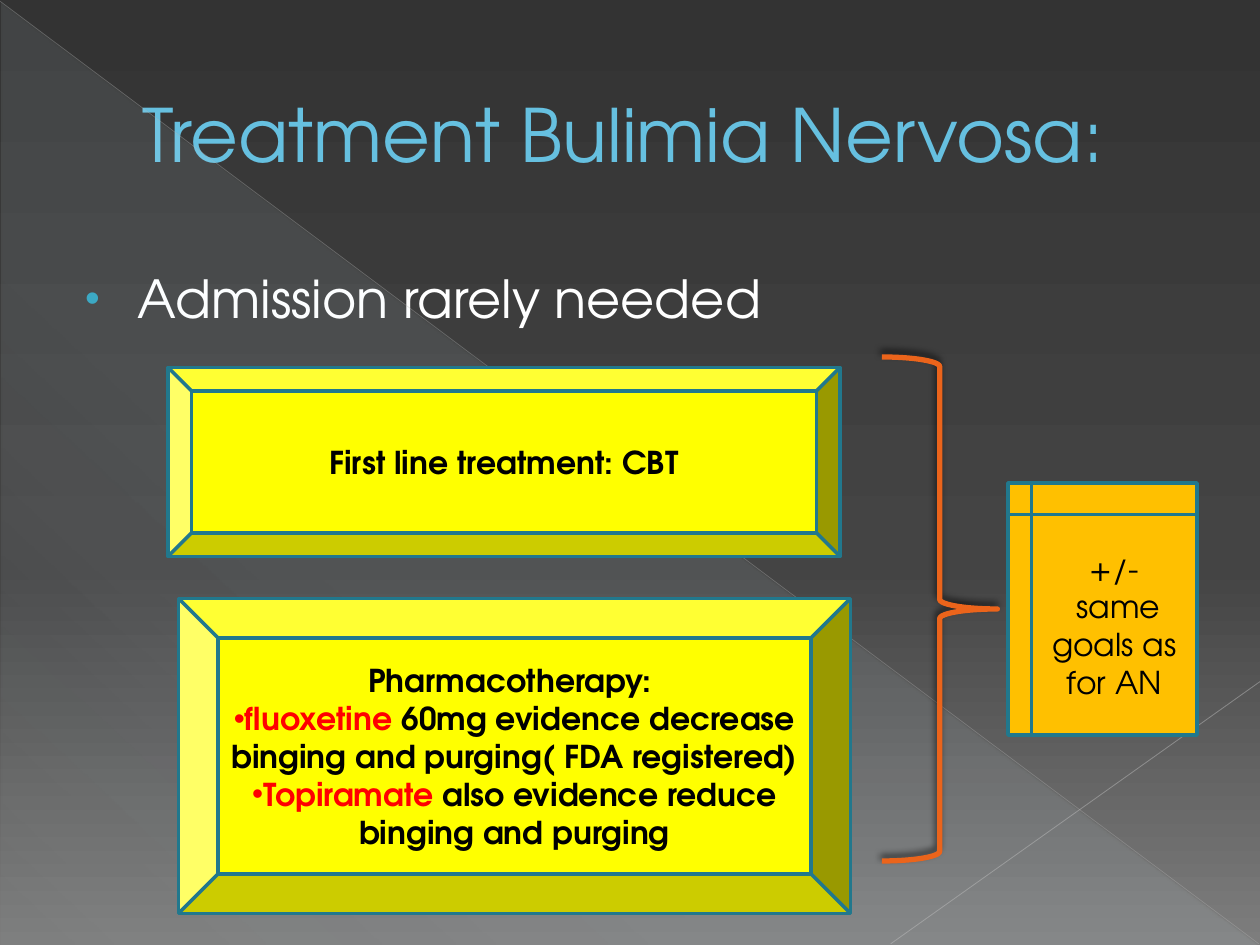
from dataclasses import dataclass
from typing import Optional

from lxml.etree import SubElement
from pptx import Presentation
from pptx.dml.color import RGBColor
from pptx.enum.shapes import MSO_CONNECTOR, MSO_SHAPE
from pptx.enum.text import MSO_ANCHOR, MSO_AUTO_SIZE, PP_ALIGN
from pptx.oxml.ns import qn
from pptx.util import Pt

FONT = "TeX Gyre Adventor"
BLACK = RGBColor(0x00, 0x00, 0x00)
WHITE = RGBColor(0xFF, 0xFF, 0xFF)
RED = RGBColor(0xFF, 0x00, 0x00)
YELLOW = RGBColor(0xFF, 0xFF, 0x00)
AMBER = RGBColor(0xFF, 0xC0, 0x00)
ORANGE = RGBColor(0xEB, 0x64, 0x1B)
TEAL = RGBColor(0x21, 0x78, 0x8D)
BULLET_TEAL = RGBColor(0x2D, 0xA2, 0xBF)
TITLE_BLUE = RGBColor(0x66, 0xC0, 0xE0)
TITLE_EDGE = RGBColor(0x1F, 0x70, 0x84)
PALE_BLUE = RGBColor(0xDE, 0xF5, 0xFA)
DARK_GREY = RGBColor(0x33, 0x33, 0x33)
MID_GREY = RGBColor(0x44, 0x44, 0x44)
LIGHT_GREY = RGBColor(0x7D, 0x7D, 0x7D)
LONG_LINE_GREY = RGBColor(0xB9, 0xB9, 0xB9)
SHORT_LINE_GREY = RGBColor(0xC1, 0xC1, 0xC1)


@dataclass
class Line:
    text: str
    drug: str = ""  # leading name, in red after a bullet


@dataclass
class Box:
    kind: MSO_SHAPE
    place: tuple[float, float, float, float]
    fill: RGBColor
    bold: bool
    lines: list[Line]


@dataclass
class Ray:
    start: tuple[float, float]
    end: tuple[float, float]
    color: RGBColor
    width: float
    opacity: int


RAYS = [
    Ray((0, 0.7), (719.3, 539.3), LONG_LINE_GREY, 0.39, 35),
    Ray((720, 389.5), (509, 539.3), SHORT_LINE_GREY, 0.47, 45),
]
BOXES = [
    Box(MSO_SHAPE.BEVEL, (96, 210, 384, 108), YELLOW, True,
        [Line("First line treatment: CBT")]),
    Box(MSO_SHAPE.BEVEL, (102, 342, 384, 180), YELLOW, True, [
        Line("Pharmacotherapy: "),
        Line(" 60mg evidence decrease binging and purging( FDA registered)", "fluoxetine"),
        Line(" also evidence reduce binging and purging", "Topiramate"),
    ]),
    Box(MSO_SHAPE.FLOWCHART_INTERNAL_STORAGE, (576, 276, 108, 144), AMBER, False,
        [Line("+/-"), Line(" same goals as for AN")]),
]


def add_color(parent, color: RGBColor, opacity: int = 100) -> None:
    element = SubElement(parent, qn("a:srgbClr"), val=str(color))
    if opacity < 100:
        SubElement(element, qn("a:alpha"), val=str(opacity * 1000))


def set_gradient(fill, properties, stops, angle: int) -> None:
    """Fill with (position, color, opacity) stops at a clockwise angle."""
    fill.gradient()
    gradient = properties.find(qn("a:gradFill"))
    for child in list(gradient):
        gradient.remove(child)
    stop_list = SubElement(gradient, qn("a:gsLst"))
    for position, color, opacity in stops:
        stop = SubElement(stop_list, qn("a:gs"), pos=str(position * 1000))
        add_color(stop, color, opacity)
    SubElement(gradient, qn("a:lin"), ang=str(angle * 60000), scaled="0")


def set_bullet(paragraph, left: float = 0, indent: float = 0,
               color: Optional[RGBColor] = None, size: int = 100) -> None:
    properties = paragraph._p.get_or_add_pPr()
    properties.set("marL", str(Pt(left)))
    properties.set("indent", str(Pt(indent)))
    if color is not None:
        add_color(SubElement(properties, qn("a:buClr")), color)
    SubElement(properties, qn("a:buSzPct"), val=str(size * 1000))
    SubElement(properties, qn("a:buFont"), typeface="Arial")
    SubElement(properties, qn("a:buChar"), char="•")


def set_font(font, size: float, color: Optional[RGBColor], bold: bool = False) -> None:
    font.name, font.size, font.bold = FONT, Pt(size), bold
    if color is not None:
        font.color.rgb = color


def add_ray(slide, ray: Ray) -> None:
    connector = slide.shapes.add_connector(
        MSO_CONNECTOR.STRAIGHT, *map(Pt, ray.start + ray.end))
    connector.line.width = Pt(ray.width)
    connector.line.color.rgb = ray.color
    properties = connector._element.spPr
    color = properties.find(".//" + qn("a:srgbClr"))
    SubElement(color, qn("a:alpha"), val=str(ray.opacity * 1000))
    SubElement(properties, qn("a:effectLst"))


def add_plain_shape(slide, kind: MSO_SHAPE, place):
    shape = slide.shapes.add_shape(kind, *map(Pt, place))
    shape.shadow.inherit = False
    return shape


def add_box(slide, box: Box) -> None:
    shape = add_plain_shape(slide, box.kind, box.place)
    shape.fill.solid()
    shape.fill.fore_color.rgb = box.fill
    shape.line.color.rgb = TEAL
    shape.line.width = Pt(2)
    frame = shape.text_frame
    frame.word_wrap = True
    frame.vertical_anchor = MSO_ANCHOR.MIDDLE
    for index, line in enumerate(box.lines):
        paragraph = frame.add_paragraph() if index else frame.paragraphs[0]
        paragraph.alignment = PP_ALIGN.CENTER
        if line.drug:
            set_bullet(paragraph)
            drug = paragraph.add_run()
            drug.text = line.drug
            drug.font.color.rgb = RED
        rest = paragraph.add_run()
        rest.text = line.text
        if line.drug:
            rest.font.color.rgb = BLACK
        set_font(paragraph.font, 18, None if line.drug else BLACK, box.bold)


def place_text(placeholder, place, text: str, size: float, color: RGBColor):
    placeholder.left, placeholder.top, placeholder.width, placeholder.height = map(Pt, place)
    frame = placeholder.text_frame
    frame.text = text
    frame.word_wrap = True
    frame.auto_size = MSO_AUTO_SIZE.NONE
    paragraph = frame.paragraphs[0]
    paragraph.alignment = PP_ALIGN.LEFT
    return paragraph


def main() -> None:
    presentation = Presentation()
    presentation.slide_width, presentation.slide_height = Pt(720), Pt(540)
    slide = presentation.slides.add_slide(presentation.slide_layouts[1])

    # Backdrop: grey gradient, pale triangle and two thin rays
    background_fill = slide.background.fill
    background_properties = slide._element.find(".//" + qn("p:bgPr"))
    set_gradient(background_fill, background_properties,
                 [(0, DARK_GREY, 100), (60, MID_GREY, 100), (100, LIGHT_GREY, 100)], 90)
    triangle = add_plain_shape(slide, MSO_SHAPE.RIGHT_TRIANGLE, (0.7, 1.4, 718.6, 538.6))
    set_gradient(triangle.fill, triangle._element.spPr,
                 [(0, PALE_BLUE, 10), (70, PALE_BLUE, 8), (100, PALE_BLUE, 1)], 133)
    triangle.line.fill.background()
    for ray in RAYS:
        add_ray(slide, ray)

    # Title with a thin outline around its letters
    title = slide.shapes.title
    paragraph = place_text(title, (36, 21, 648, 110), "Treatment Bulimia Nervosa:", 42, TITLE_BLUE)
    title.text_frame.vertical_anchor = MSO_ANCHOR.MIDDLE
    paragraph._p.get_or_add_pPr().set("marL", str(Pt(38)))
    set_font(paragraph.font, 42, TITLE_BLUE)
    run_properties = paragraph.runs[0]._r.get_or_add_rPr()
    outline = SubElement(run_properties, qn("a:ln"), w=str(Pt(0.5)))
    add_color(SubElement(outline, qn("a:solidFill")), TITLE_EDGE)

    # Bulleted list
    paragraph = place_text(slide.placeholders[1], (36, 148.5, 648, 360),
                           "Admission rarely needed", 30, WHITE)
    set_bullet(paragraph, 35.5, -30, BULLET_TEAL, 80)
    set_font(paragraph.font, 30, WHITE)

    # Treatment boxes and the brace that joins them
    for box in BOXES:
        add_box(slide, box)
    brace = add_plain_shape(slide, MSO_SHAPE.RIGHT_BRACE, (504, 204, 66, 288))
    brace.fill.background()
    brace.line.color.rgb = ORANGE
    brace.line.width = Pt(3)
    effects = brace._element.spPr.find(qn("a:effectLst"))
    shadow = SubElement(effects, qn("a:outerShdw"), blurRad=str(Pt(4)), dist=str(Pt(3)),
                        dir=str(245 * 60000), rotWithShape="0")
    add_color(shadow, BLACK, 60)

    presentation.save("out.pptx")


if __name__ == "__main__":
    main()
